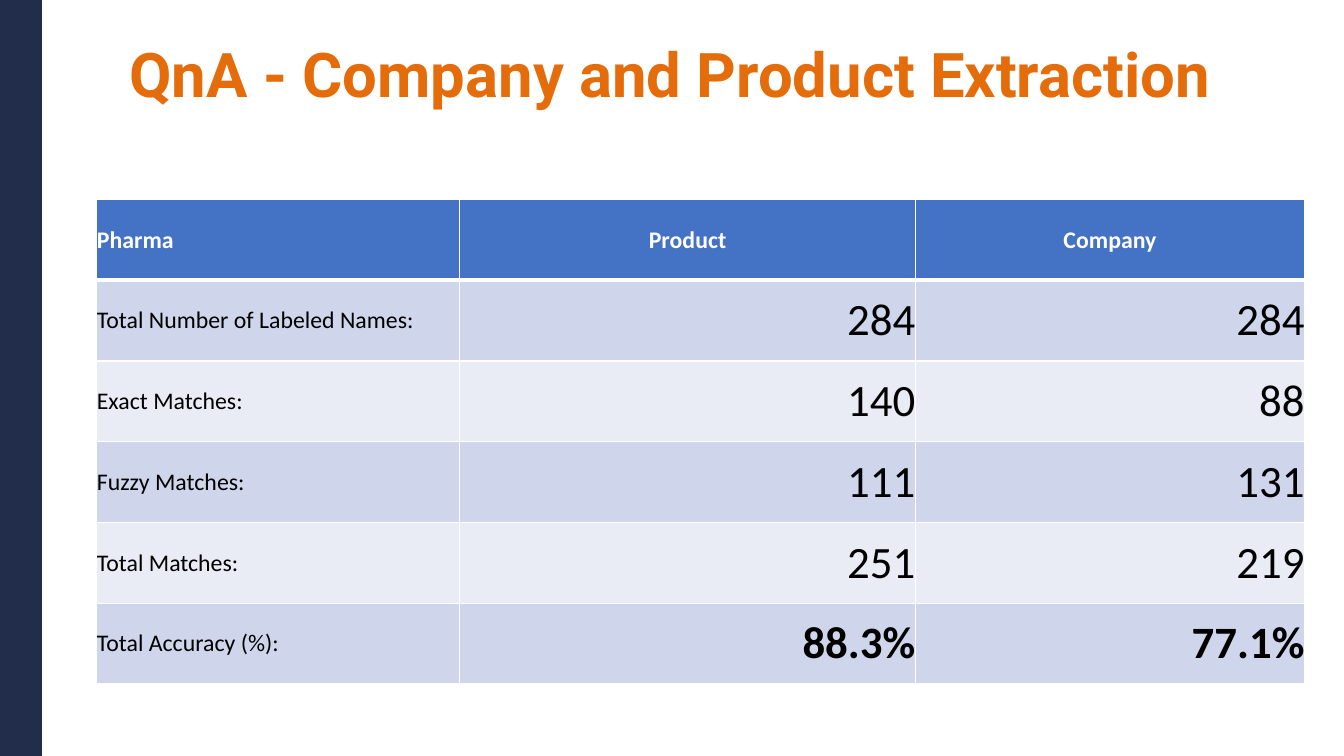
from dataclasses import dataclass

import pptx
import pptx.dml.color
import pptx.enum.shapes
import pptx.enum.text
import pptx.oxml
import pptx.oxml.ns
import pptx.presentation
import pptx.slide
import pptx.table
import pptx.text.text
import pptx.util

Pt = pptx.util.Pt
Align = pptx.enum.text.PP_ALIGN
Anchor = pptx.enum.text.MSO_ANCHOR


@dataclass(frozen=True)
class Theme:
    sidebar: str = "222C4B"
    title: str = "E46C0A"
    header: str = "4472C4"
    odd_band: str = "CFD5EA"
    even_band: str = "E9EBF5"
    white: str = "FFFFFF"
    black: str = "000000"
    title_font: str = "Roboto"
    body_font: str = "Calibri"
    title_size: float = 44
    label_size: float = 17
    value_size: float = 32
    rule: float = 1
    header_rule: float = 3


@dataclass(frozen=True)
class Measure:
    label: str
    product: str
    company: str
    bold: bool = False


@dataclass(frozen=True)
class CellStyle:
    fill: str
    color: str
    size: float
    bold: bool
    align: Align
    top_rule: float
    bottom_rule: float


THEME = Theme()
SLIDE_WIDTH, SLIDE_HEIGHT = 960, 540
COLUMN_WIDTHS = (259.2, 325.5, 278)
ROW_HEIGHT = 57.7
MEASURES = (
    Measure("Pharma", "Product", "Company", True),
    Measure("Total Number of Labeled Names:", "284", "284"),
    Measure("Exact Matches:", "140", "88"),
    Measure("Fuzzy Matches:", "111", "131"),
    Measure("Total Matches:", "251", "219"),
    Measure("Total Accuracy (%):", "88.3%", "77.1%", True),
)


def rgb(color: str) -> pptx.dml.color.RGBColor:
    return pptx.dml.color.RGBColor.from_string(color)


def format_paragraph(paragraph: pptx.text.text._Paragraph, font_name: str, size: float,
                     color: str, bold: bool, align: Align) -> None:
    paragraph.alignment = align
    for run in paragraph.runs:
        run.font.name = font_name
        run.font.size = Pt(size)
        run.font.bold = bold
        run.font.color.rgb = rgb(color)


def draw_sidebar(slide: pptx.slide.Slide) -> None:
    sidebar = slide.shapes.add_shape(
        pptx.enum.shapes.MSO_SHAPE.RECTANGLE, Pt(0), Pt(0), Pt(30), Pt(SLIDE_HEIGHT))
    sidebar.shadow.inherit = False
    sidebar.fill.solid()
    sidebar.fill.fore_color.rgb = rgb(THEME.sidebar)
    sidebar.line.fill.background()


def draw_title(slide: pptx.slide.Slide) -> None:
    title = slide.shapes.title
    title.left, title.top, title.width, title.height = Pt(47), Pt(28), Pt(864), Pt(90)
    frame = title.text_frame
    frame.text = "QnA - Company and Product Extraction"
    frame.word_wrap = True
    frame.vertical_anchor = Anchor.TOP
    heading = frame.paragraphs[0]
    heading.line_spacing = 0.9
    format_paragraph(heading, THEME.title_font, THEME.title_size, THEME.title, True, Align.CENTER)


def add_rules(cell: pptx.table._Cell, style: CellStyle) -> None:
    properties = cell._tc.get_or_add_tcPr()
    widths = {"L": THEME.rule, "R": THEME.rule, "T": style.top_rule, "B": style.bottom_rule}
    for side, width in widths.items():
        properties.append(pptx.oxml.parse_xml(
            f'<a:ln{side} {pptx.oxml.ns.nsdecls("a")} w="{Pt(width)}"><a:solidFill>'
            f'<a:srgbClr val="{THEME.white}"/></a:solidFill></a:ln{side}>'))


def draw_cell(cell: pptx.table._Cell, text: str, style: CellStyle) -> None:
    cell.margin_left = cell.margin_right = cell.margin_top = cell.margin_bottom = Pt(0)
    cell.vertical_anchor = Anchor.MIDDLE
    add_rules(cell, style)
    cell.fill.solid()
    cell.fill.fore_color.rgb = rgb(style.fill)
    cell.text_frame.text = text
    format_paragraph(cell.text_frame.paragraphs[0], THEME.body_font, style.size,
                     style.color, style.bold, style.align)


def style_for(row: int, column: int, measure: Measure) -> CellStyle:
    is_header, is_label = row == 0, column == 0
    band = THEME.odd_band if row % 2 else THEME.even_band
    value_align = Align.CENTER if is_header else Align.RIGHT
    return CellStyle(
        fill=THEME.header if is_header else band,
        color=THEME.white if is_header else THEME.black,
        size=THEME.label_size if is_header or is_label else THEME.value_size,
        bold=measure.bold and (is_header or not is_label),
        align=Align.LEFT if is_label else value_align,
        top_rule=THEME.header_rule if row == 1 else THEME.rule,
        bottom_rule=THEME.header_rule if is_header else THEME.rule,
    )


def draw_accuracy_table(slide: pptx.slide.Slide) -> None:
    accuracy = slide.shapes.add_table(
        len(MEASURES), len(COLUMN_WIDTHS), Pt(69.2), Pt(142.5),
        Pt(sum(COLUMN_WIDTHS)), Pt(ROW_HEIGHT * len(MEASURES))).table
    for column, width in zip(accuracy.columns, COLUMN_WIDTHS):
        column.width = Pt(width)
    for row, measure in enumerate(MEASURES):
        accuracy.rows[row].height = Pt(ROW_HEIGHT)
        for column, text in enumerate((measure.label, measure.product, measure.company)):
            draw_cell(accuracy.cell(row, column), text, style_for(row, column, measure))


def main() -> None:
    deck = pptx.Presentation()
    deck.slide_width, deck.slide_height = Pt(SLIDE_WIDTH), Pt(SLIDE_HEIGHT)
    slide = deck.slides.add_slide(deck.slide_layouts[5])
    draw_sidebar(slide)
    draw_title(slide)
    draw_accuracy_table(slide)
    deck.save("out.pptx")


if __name__ == "__main__":
    main()
